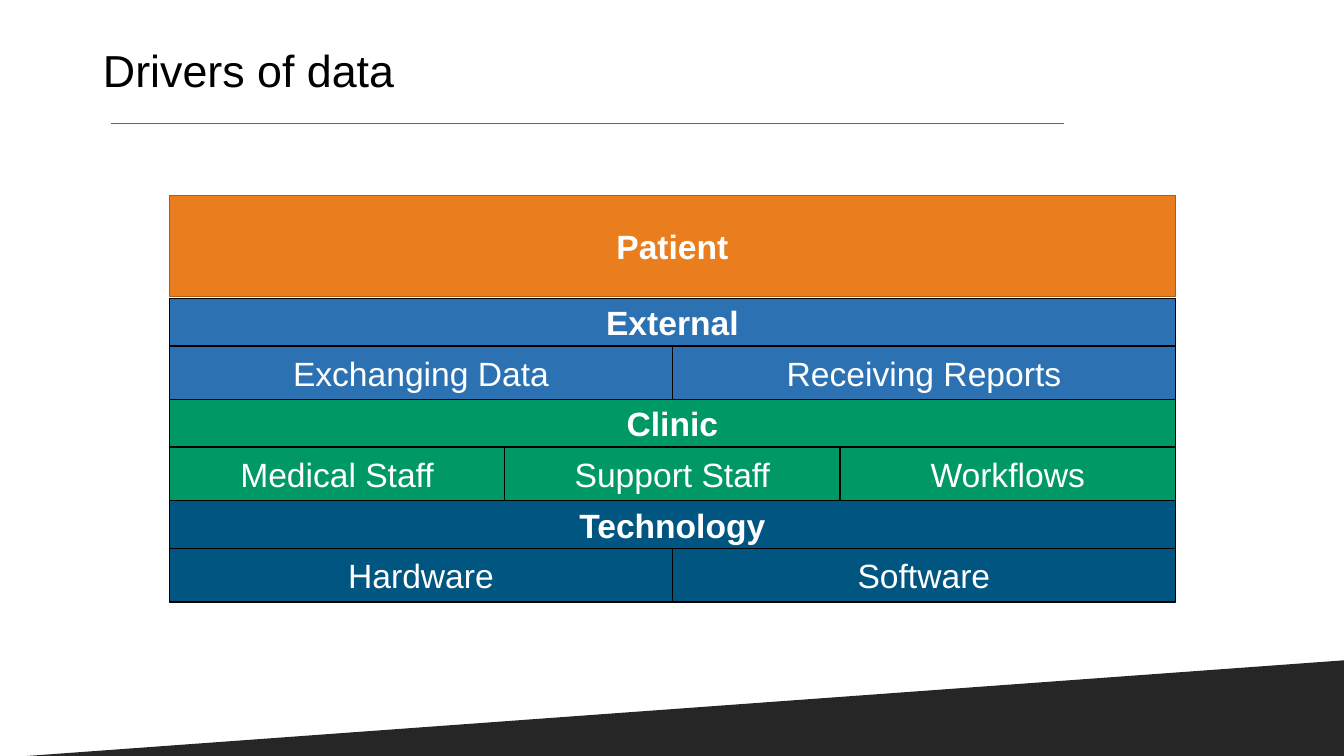
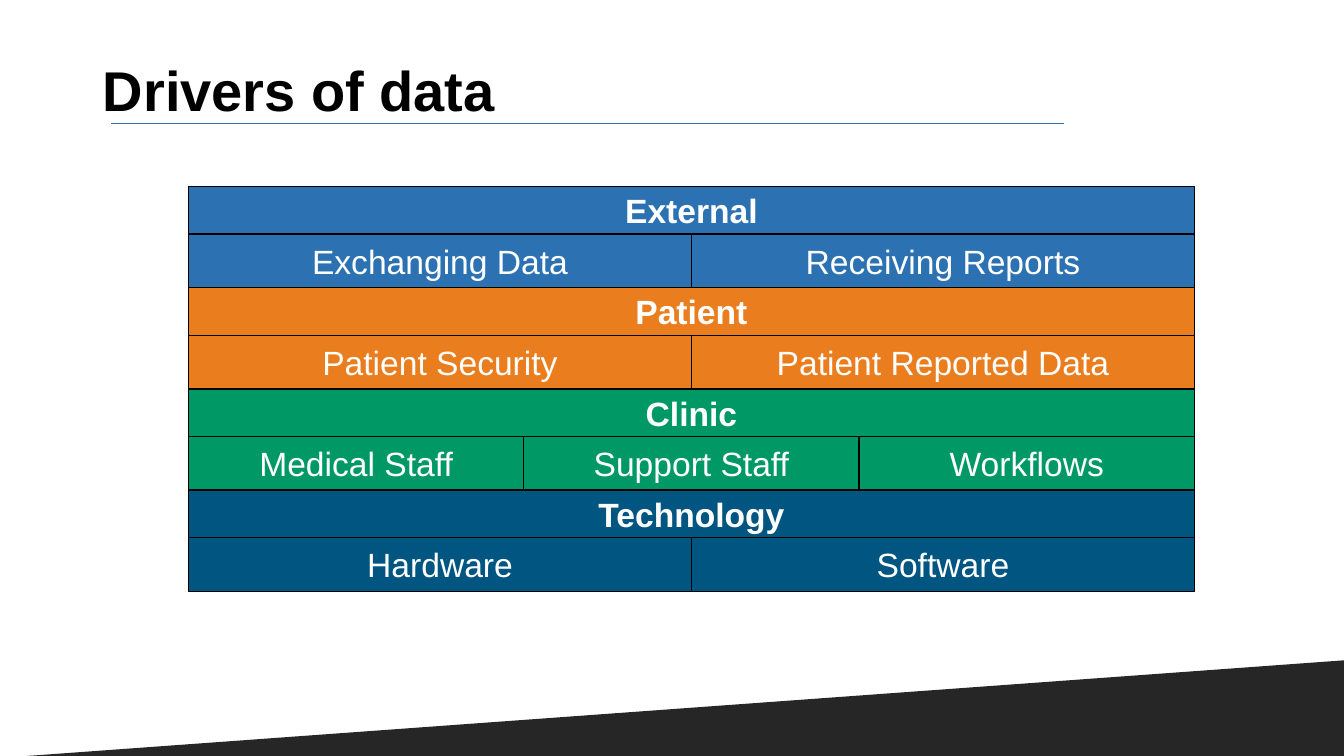
from lxml import etree
from pptx import Presentation
from pptx.dml import color
from pptx.enum import shapes, text
from pptx.util import Cm, Pt

FONT = "Arial"
BLUE, ORANGE, GREEN, NAVY = "2C72B3", "EA7D1E", "009966", "005581"
WHITE, BLACK, CHARCOAL, RUST = "FFFFFF", "000000", "262626", "AD5C16"
STACK_WIDTH, HEADING_HEIGHT, ITEM_HEIGHT = 25.35, 1.2, 1.35
DRAWING = "http://schemas.openxmlformats.org/drawingml/2006/main"


def rgb(value):
    return color.RGBColor.from_string(value)


def add_block(slide, label, left, top, width, height, fill, bold=False, outline=BLACK):
    block = slide.shapes.add_shape(
        shapes.MSO_SHAPE.RECTANGLE, Cm(left), Cm(top), Cm(width), Cm(height))
    block.shadow.inherit = False
    block.fill.solid()
    block.fill.fore_color.rgb = rgb(fill)
    block.line.color.rgb = rgb(outline)
    block.line.width = Pt(1)
    frame = block.text_frame
    frame.text = label
    frame.vertical_anchor = text.MSO_ANCHOR.MIDDLE
    paragraph = frame.paragraphs[0]
    paragraph.alignment = text.PP_ALIGN.CENTER
    for name, value in {"name": FONT, "size": Pt(24), "bold": bold}.items():
        setattr(paragraph.font, name, value)
    paragraph.font.color.rgb = rgb(WHITE)


external = ("External", BLUE, ["Exchanging Data", "Receiving Reports"])
patient = ("Patient", ORANGE, ["Patient Security", "Patient Reported Data"])
clinic = ("Clinic", GREEN, ["Medical Staff", "Support Staff", "Workflows"])
technology = ("Technology", NAVY, ["Hardware", "Software"])

pages = [
    {"title_top": 1.02, "title_height": 1.62, "title_font": {"size": Pt(32), "bold": False},
     "left": 4.27, "top": 7.52, "drivers": [external, clinic, technology]},
    {"title_top": 1.32, "title_height": 2.06, "title_font": {"size": Pt(40), "bold": True},
     "left": 4.75, "top": 4.7, "drivers": [external, patient, clinic, technology]},
]

deck = Presentation()
deck.slide_width, deck.slide_height = Cm(33.87), Cm(19.05)
layout = deck.slide_layouts.get_by_name("Title Only")
slides = [deck.slides.add_slide(layout) for page in pages]

wedge = slides[0].shapes.add_shape(
    shapes.MSO_SHAPE.RIGHT_TRIANGLE, 0, Cm(16.64), deck.slide_width, Cm(2.46))
wedge.shadow.inherit = False
wedge.fill.solid()
wedge.fill.fore_color.rgb = rgb(CHARCOAL)
wedge.line.fill.background()
wedge.element.spPr.xfrm.set("flipH", "1")

title_rule = slides[0].shapes.add_connector(
    shapes.MSO_CONNECTOR.STRAIGHT, Cm(2.8), Cm(3.1), Cm(26.82), Cm(3.1))
title_rule.line.color.rgb = rgb(BLUE)
title_rule.line.width = Pt(0.5)
effects = etree.SubElement(title_rule.element.spPr, f"{{{DRAWING}}}effectLst")
shade = etree.SubElement(effects, f"{{{DRAWING}}}outerShdw",
                         blurRad=str(Pt(4)), dist=str(Pt(3)), dir="2700000", rotWithShape="0")
shade_color = etree.SubElement(shade, f"{{{DRAWING}}}srgbClr", val=BLACK)
etree.SubElement(shade_color, f"{{{DRAWING}}}alpha", val="40000")

for part in (wedge, title_rule):
    layout.shapes.element.append(part.element)

for slide, page in zip(slides, pages):
    title = slide.shapes.title
    bounds = {"left": Cm(2.34), "top": Cm(page["title_top"]),
              "width": Cm(29.21), "height": Cm(page["title_height"])}
    for name, value in bounds.items():
        setattr(title, name, value)
    title.text_frame.text = "Drivers of data"
    title.text_frame.auto_size = text.MSO_AUTO_SIZE.NONE
    title.text_frame.vertical_anchor = text.MSO_ANCHOR.MIDDLE
    heading = title.text_frame.paragraphs[0]
    heading.alignment = text.PP_ALIGN.LEFT
    heading.line_spacing = 0.9
    for name, value in {"name": FONT, **page["title_font"]}.items():
        setattr(heading.font, name, value)
    heading.font.color.rgb = rgb(BLACK)

    left, top = page["left"], page["top"]
    for driver, fill, items in page["drivers"]:
        add_block(slide, driver, left, top, STACK_WIDTH, HEADING_HEIGHT, fill, bold=True)
        item_width = STACK_WIDTH / len(items)
        for column, item in enumerate(items):
            add_block(slide, item, left + column * item_width, top + HEADING_HEIGHT,
                      item_width, ITEM_HEIGHT, fill)
        top += HEADING_HEIGHT + ITEM_HEIGHT

add_block(slides[0], "Patient", pages[0]["left"], 4.93, STACK_WIDTH, 2.54, ORANGE,
          bold=True, outline=RUST)

deck.save("out.pptx")
